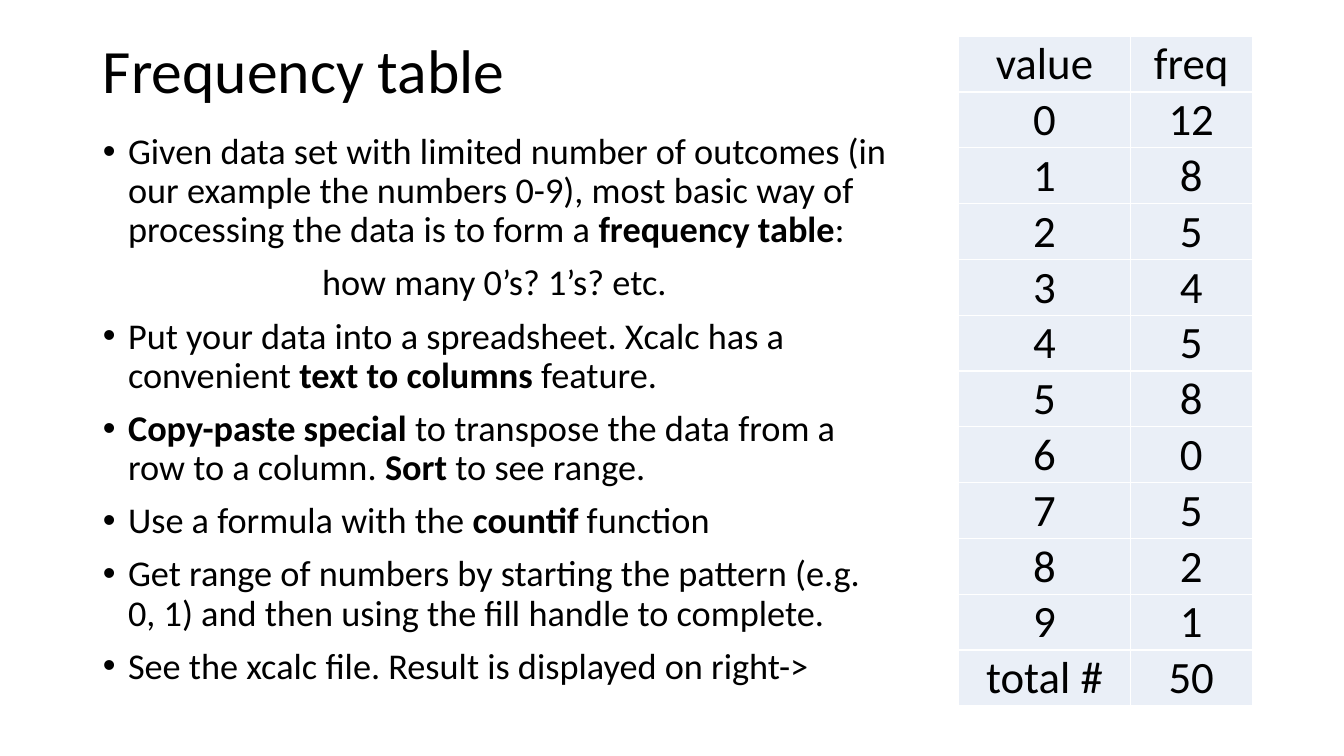
from lxml import etree
from pptx import Presentation
from pptx.dml.color import RGBColor
from pptx.enum.text import MSO_ANCHOR, MSO_AUTO_SIZE, PP_ALIGN
from pptx.oxml.ns import qn
from pptx.util import Inches, Pt

LEFT, CENTER = PP_ALIGN.LEFT, PP_ALIGN.CENTER
MIDDLE, TOP, BOTTOM = MSO_ANCHOR.MIDDLE, MSO_ANCHOR.TOP, MSO_ANCHOR.BOTTOM
FIXED = MSO_AUTO_SIZE.NONE
BLACK = RGBColor(0x00, 0x00, 0x00)
WHITE = RGBColor(0xFF, 0xFF, 0xFF)
PALE = RGBColor(0xEA, 0xEF, 0xF7)
FONT = "Calibri"

# Each point alternates plain and bold text, starting with plain
POINTS = [
    ["Given data set with limited number of outcomes (in our example the "
     "numbers 0-9), most basic way of processing the data is to form a ",
     "frequency table", ":"],
    ["how many 0’s? 1’s? etc. "],
    ["Put your data into a spreadsheet. Xcalc has a convenient ",
     "text to columns ", "feature."],
    ["", "Copy-paste special", " to transpose the data from a row to a column. ",
     "Sort", " to see range."],
    ["Use a formula with the ", "countif", " function"],
    ["Get range of numbers by starting the pattern (e.g. 0, 1) and then using "
     "the fill handle to complete."],
    ["See the xcalc file. Result is displayed on right->"],
]
CENTRED = 1
COUNTS = [12, 8, 5, 4, 5, 8, 0, 5, 2, 1]


def place(shape, left, top, width, height):
    shape.left, shape.top = Inches(left), Inches(top)
    shape.width, shape.height = Inches(width), Inches(height)


def style(font, size):
    font.name, font.size = FONT, Pt(size)
    font.color.rgb = BLACK


deck = Presentation()
deck.slide_width, deck.slide_height = Inches(13.33), Inches(7.5)
slide = deck.slides.add_slide(deck.slide_layouts[1])

# Title
title = slide.shapes.title
place(title, 0.92, 0, 11.5, 1.45)
frame = title.text_frame
frame.text = "Frequency table"
frame.auto_size = FIXED
frame.vertical_anchor = MIDDLE
para = frame.paragraphs[0]
para.alignment, para.line_spacing = LEFT, 0.9
style(para.runs[0].font, 44)

# Bulleted points
body = slide.placeholders[1]
place(body, 0.92, 1.27, 8.05, 5.82)
frame = body.text_frame
frame.auto_size = FIXED
frame.vertical_anchor = TOP
for i, parts in enumerate(POINTS):
    para = frame.add_paragraph() if i else frame.paragraphs[0]
    para.line_spacing = 0.9
    para.space_before = Pt(10 if i else 0)
    props = para._p.get_or_add_pPr()
    if i == CENTRED:
        para.alignment = CENTER
        props.set("marL", "0")
        props.set("indent", "0")
        etree.SubElement(props, qn("a:buNone"))
    else:
        para.alignment = LEFT
        props.set("marL", str(Inches(0.25)))
        props.set("indent", str(-Inches(0.25)))
        etree.SubElement(props, qn("a:buFont"), typeface="Arial")
        etree.SubElement(props, qn("a:buChar"), char="•")
    for j, part in enumerate(parts):
        if part:
            run = para.add_run()
            run.text = part
            style(run.font, 25.9)
            run.font.bold = j % 2 == 1

# Frequency table
rows = [("value", "freq"), *enumerate(COUNTS), ("total #", sum(COUNTS))]
table = slide.shapes.add_table(
    len(rows), 2, Inches(9.51), Inches(0.36), Inches(2.91), Inches(6.53)).table
table.columns[0].width, table.columns[1].width = Inches(1.7), Inches(1.21)
for r, row in enumerate(rows):
    for c, value in enumerate(row):
        cell = table.cell(r, c)
        cell.text = str(value)
        cell.vertical_anchor = BOTTOM
        cell.margin_left = cell.margin_right = cell.margin_top = Inches(0.01)
        cell.margin_bottom = 0
        para = cell.text_frame.paragraphs[0]
        para.alignment = CENTER
        font = para.runs[0].font
        style(font, 32)
        font.bold = False
        props = cell._tc.get_or_add_tcPr()
        for side in ("lnL", "lnR", "lnT", "lnB"):
            line = etree.SubElement(props, qn("a:" + side), w=str(Pt(1)))
            fill = etree.SubElement(line, qn("a:solidFill"))
            etree.SubElement(fill, qn("a:srgbClr"), val=str(WHITE))
        cell.fill.solid()
        cell.fill.fore_color.rgb = PALE

deck.save("out.pptx")
